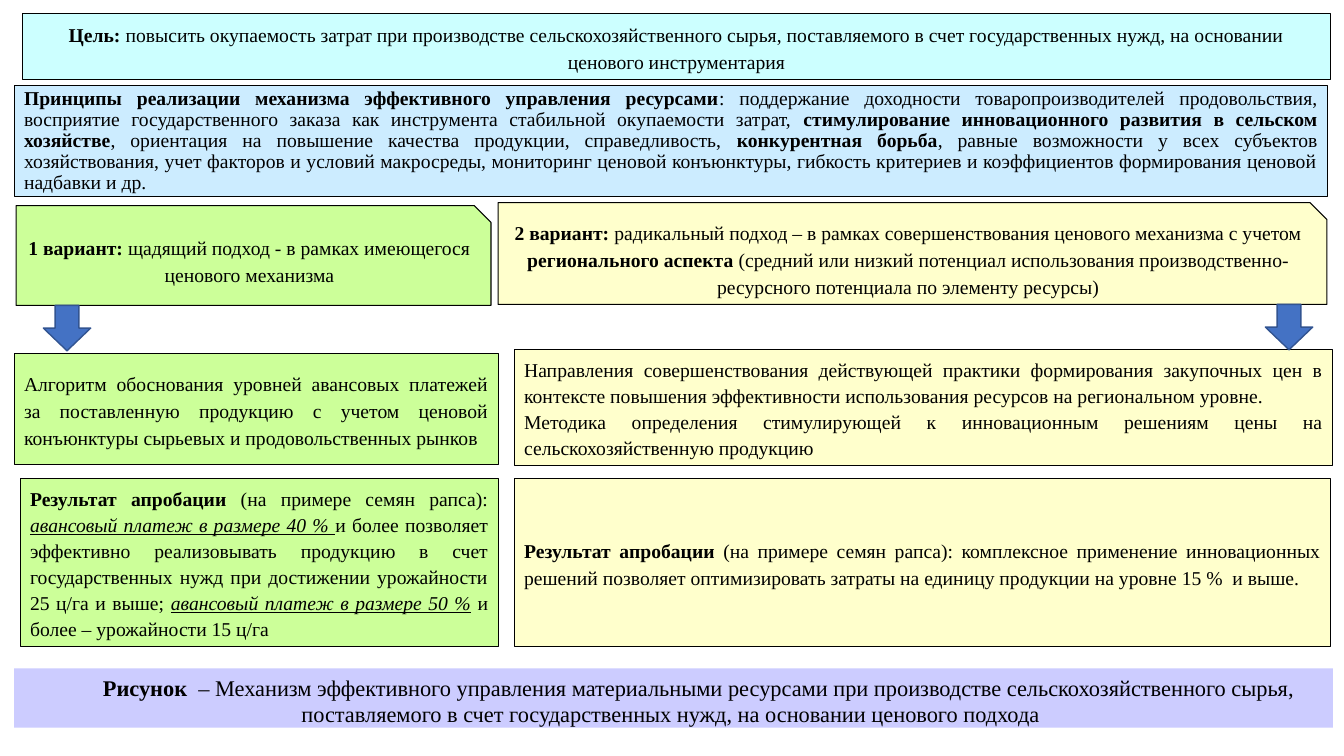
from pptx import Presentation
from pptx.dml.color import RGBColor
from pptx.enum.shapes import MSO_SHAPE
from pptx.enum.text import MSO_ANCHOR, PP_ALIGN
from pptx.util import Inches, Pt

BLACK = RGBColor(0x00, 0x00, 0x00)
CYAN = RGBColor(0xCC, 0xFF, 0xFF)
SKY = RGBColor(0xCC, 0xEC, 0xFF)
GREEN = RGBColor(0xCC, 0xFF, 0x99)
YELLOW = RGBColor(0xFF, 0xFF, 0xCC)
LILAC = RGBColor(0xCC, 0xCC, 0xFF)
BLUE = RGBColor(0x44, 0x72, 0xC4)
DARK_BLUE = RGBColor(0x32, 0x54, 0x91)

FONT = "Times New Roman"
RECT = MSO_SHAPE.RECTANGLE
SNIPPED = MSO_SHAPE.SNIP_1_RECTANGLE
CENTER = PP_ALIGN.CENTER
JUSTIFY = PP_ALIGN.JUSTIFY

# Each paragraph is a list of (text, style); style letters: b bold, i italic, u underlined.
CAPTION = [[
    ("Рисунок ", "b"),
    (" – Механизм эффективного управления материальными ресурсами при производстве "
     "сельскохозяйственного сырья, поставляемого в счет государственных нужд, "
     "на основании ценового подхода ", ""),
]]
GOAL = [[
    ("Цель: ", "b"),
    ("повысить окупаемость затрат при производстве сельскохозяйственного сырья, "
     "поставляемого в счет государственных нужд, на основании ценового инструментария", ""),
]]
PRINCIPLES = [[
    ("Принципы реализации механизма эффективного управления ресурсами", "b"),
    (": поддержание доходности товаропроизводителей продовольствия, восприятие "
     "государственного заказа как инструмента стабильной окупаемости затрат, ", ""),
    ("стимулирование инновационного развития в сельском хозяйстве", "b"),
    (", ориентация на повышение качества продукции, справедливость, ", ""),
    ("конкурентная борьба", "b"),
    (", равные возможности у всех субъектов хозяйствования, учет факторов и условий "
     "макросреды, мониторинг ценовой конъюнктуры, гибкость критериев и коэффициентов "
     "формирования ценовой надбавки и др.", ""),
]]
OPTION_1 = [[
    ("1 вариант: ", "b"),
    ("щадящий подход - в рамках имеющегося ценового механизма", ""),
]]
OPTION_2 = [[
    ("2 вариант: ", "b"),
    ("радикальный подход – в рамках совершенствования ценового механизма с учетом ", ""),
    ("регионального аспекта", "b"),
    (" (средний или низкий потенциал использования производственно-ресурсного "
     "потенциала по элементу ресурсы)", ""),
]]
ALGORITHM = [[
    ("Алгоритм обоснования уровней авансовых платежей за поставленную продукцию с учетом "
     "ценовой конъюнктуры сырьевых и продовольственных рынков ", ""),
]]
DIRECTIONS = [
    [("Направления совершенствования действующей практики формирования закупочных цен "
      "в контексте повышения эффективности использования ресурсов на региональном уровне.", "")],
    [("Методика определения стимулирующей к инновационным решениям цены "
      "на сельскохозяйственную продукцию", "")],
]
RESULT_1 = [[
    ("Результат апробации", "b"),
    (" (на примере семян рапса): ", ""),
    ("авансовый платеж в размере 40 % ", "iu"),
    ("и более позволяет эффективно реализовывать продукцию в счет государственных нужд "
     "при достижении урожайности 25 ц/га и выше; ", ""),
    ("авансовый платеж в размере 50 %", "iu"),
    (" и более – урожайности 15 ц/га", ""),
]]
RESULT_2 = [[
    ("Результат апробации", "b"),
    (" (на примере семян рапса): комплексное применение инновационных решений позволяет "
     "оптимизировать затраты на единицу продукции на уровне 15 %  и выше.", ""),
]]


def add_figure(s, kind, box, fill, line=None, width=0.75):
    sp = s.shapes.add_shape(kind, *(Inches(v) for v in box))
    sp.shadow.inherit = False
    sp.fill.solid()
    sp.fill.fore_color.rgb = fill
    if line is None:
        sp.line.fill.background()
    else:
        sp.line.color.rgb = line
        sp.line.width = Pt(width)
    return sp


def write(sp, paragraphs, align, size=14, spacing=1.15, after=10):
    tf = sp.text_frame
    tf.word_wrap = True
    tf.vertical_anchor = MSO_ANCHOR.MIDDLE
    for i, runs in enumerate(paragraphs):
        p = tf.add_paragraph() if i else tf.paragraphs[0]
        p.alignment = align
        p.line_spacing = spacing
        p.space_after = Pt(after)
        for text, style in runs:
            r = p.add_run()
            r.text = text
            r.font.name = FONT
            r.font.size = Pt(size)
            r.font.color.rgb = BLACK
            r.font.bold = "b" in style
            r.font.italic = "i" in style
            r.font.underline = "u" in style


def add_caption(s):
    sp = add_figure(s, RECT, (0.14, 6.63, 13.08, 0.59), LILAC)
    write(sp, CAPTION, CENTER, size=16, spacing=1.0, after=0)
    tf = sp.text_frame
    tf.margin_bottom = 0
    # First-line indent
    tf.paragraphs[0]._p.get_or_add_pPr().set("indent", str(Inches(0.5)))


def add_principles(s):
    sp = add_figure(s, RECT, (0.14, 0.85, 13.03, 1.1), SKY, BLACK)
    write(sp, PRINCIPLES, JUSTIFY, spacing=0.9, after=0)
    tf = sp.text_frame
    tf.margin_top = tf.margin_bottom = Inches(0.02)


def main():
    prs = Presentation()
    prs.slide_width, prs.slide_height = Inches(13.33), Inches(7.5)
    s = prs.slides.add_slide(prs.slide_layouts[6])

    add_caption(s)
    add_principles(s)
    for kind, box, fill, paragraphs, align in (
        (RECT, (0.22, 0.13, 12.98, 0.66), CYAN, GOAL, CENTER),
        (SNIPPED, (0.16, 2.04, 4.71, 0.99), GREEN, OPTION_1, CENTER),
        (SNIPPED, (4.94, 2.01, 8.22, 1.01), YELLOW, OPTION_2, CENTER),
        (RECT, (0.14, 3.51, 4.8, 1.1), GREEN, ALGORITHM, JUSTIFY),
        (RECT, (5.1, 4.75, 8.1, 1.66), YELLOW, RESULT_2, JUSTIFY),
    ):
        write(add_figure(s, kind, box, fill, BLACK), paragraphs, align)

    # The fullest boxes take slightly tighter lines
    for box, fill, paragraphs in (
        ((5.1, 3.47, 8.12, 1.15), YELLOW, DIRECTIONS),
        ((0.2, 4.75, 4.74, 1.66), GREEN, RESULT_1),
    ):
        sp = add_figure(s, RECT, box, fill, BLACK)
        write(sp, paragraphs, JUSTIFY, spacing=1.1, after=0)

    for left, top in ((0.43, 3.03), (12.55, 3.02)):
        add_figure(s, MSO_SHAPE.DOWN_ARROW, (left, top, 0.47, 0.45), BLUE, DARK_BLUE, 1)

    prs.save("out.pptx")


if __name__ == "__main__":
    main()
